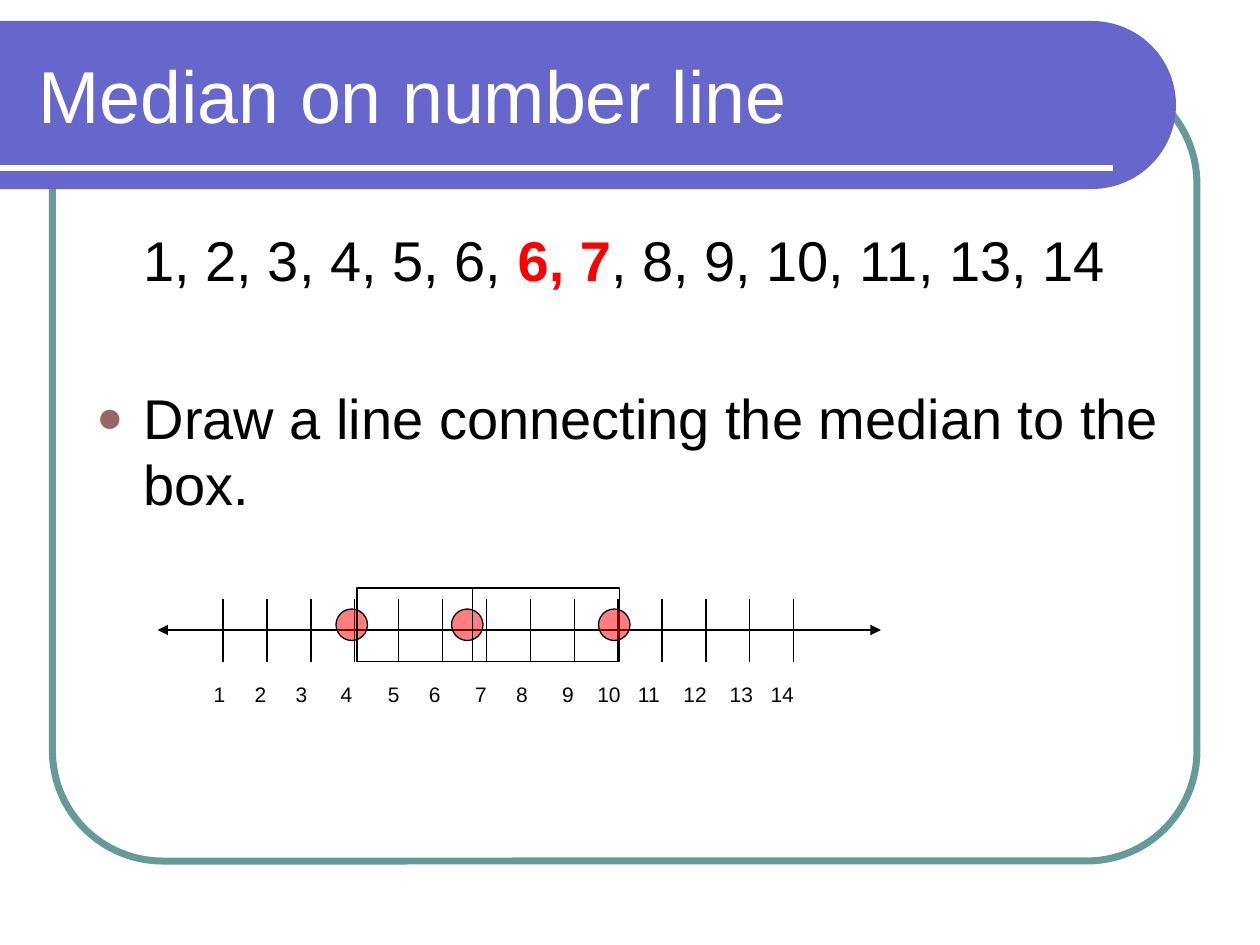
from dataclasses import dataclass
from math import cos, pi, sin

from lxml.etree import SubElement
from pptx import Presentation
from pptx.dml.color import RGBColor
from pptx.enum.shapes import MSO_CONNECTOR as Connector, MSO_SHAPE as Shape
from pptx.enum.text import MSO_ANCHOR as Anchor, PP_ALIGN as Align
from pptx.oxml.ns import qn
from pptx.util import Inches, Pt


@dataclass(frozen=True)
class Theme:
    """Colours, font and type sizes of the slide."""
    font: str = "Arial"
    banner: str = "6666CC"
    frame: str = "669999"
    bullet: str = "996666"
    accent: str = "FF0000"
    ink: str = "000000"
    paper: str = "FFFFFF"
    title: int = 42
    body: int = 32
    label: int = 12
    thin: float = 0.75


THEME = Theme()
COLUMNS, ROWS = 120, 90
LABEL_CENTRES = (20.9, 24.8, 28.7, 33, 37.5, 41.4, 45.8,
                 49.7, 54.1, 58, 61.8, 66.2, 70.6, 74.5)


def grid(*cells):
    """Turn columns or rows, each a twelfth of an inch, into lengths."""
    return [Inches(cell / 12) for cell in cells]


def apply(target, **values):
    """Set each given attribute on the target."""
    for name, value in values.items():
        setattr(target, name, value)


def paint(shape, fill=None, line=None, width=THEME.thin, alpha=None):
    """Give a shape its fill and outline, without a shadow."""
    shape.shadow.inherit = False
    if fill:
        shape.fill.solid()
        shape.fill.fore_color.rgb = RGBColor.from_string(fill)
    else:
        shape.fill.background()
    if alpha:
        colour = shape.fill._xPr.find(qn("a:solidFill"))[0]
        SubElement(colour, qn("a:alpha"), val=str(alpha * 1000))
    if line:
        shape.line.color.rgb = RGBColor.from_string(line)
        shape.line.width = Pt(width)
    else:
        shape.line.fill.background()


def add_preset(slide, kind, cells, **look):
    """Add a painted preset shape."""
    shape = slide.shapes.add_shape(kind, *grid(*cells))
    paint(shape, **look)
    return shape


def add_line(slide, cells, colour=THEME.ink, width=THEME.thin, arrow=False):
    """Add a straight line, with an arrowhead at its end on request."""
    line = slide.shapes.add_connector(Connector.STRAIGHT, *grid(*cells))
    line.line.color.rgb = RGBColor.from_string(colour)
    line.line.width = Pt(width)
    if arrow:
        SubElement(line.line._get_or_add_ln(), qn("a:tailEnd"), type="triangle")
    SubElement(line._element.spPr, qn("a:effectLst"))


def add_banner(slide, top, right, height):
    """Add the title band, which ends in a half circle."""
    radius, steps = height / 2, 48
    angles = [pi * step / steps - pi / 2 for step in range(steps + 1)]
    arc = [grid(right - radius + radius * cos(angle),
                top + radius + radius * sin(angle)) for angle in angles]
    builder = slide.shapes.build_freeform(*grid(0, top), scale=1.0)
    builder.add_line_segments(arc + [grid(0, top + height)], close=True)
    paint(builder.convert_to_shape(), fill=THEME.banner)


def add_text_frame(slide, cells, **values):
    """Add a wrapping text box and return its frame."""
    frame = slide.shapes.add_textbox(*grid(*cells)).text_frame
    apply(frame, word_wrap=True, **values)
    return frame


def add_run(paragraph, text, size, colour=THEME.ink, bold=False):
    """Append formatted text to a paragraph."""
    run = paragraph.add_run()
    run.text = text
    apply(run.font, name=THEME.font, size=Pt(size), bold=bold)
    run.font.color.rgb = RGBColor.from_string(colour)


def indent(paragraph, margin, hanging=0):
    """Set the left margin and hanging indent in columns."""
    properties = paragraph._p.get_or_add_pPr()
    for name, cells in {"marL": margin, "indent": -hanging}.items():
        properties.set(name, str(grid(cells)[0]))
    return properties


def add_bullet(properties):
    """Add the round coloured bullet."""
    colour = SubElement(properties, qn("a:buClr"))
    SubElement(colour, qn("a:srgbClr"), val=THEME.bullet)
    SubElement(properties, qn("a:buSzPct"), val="80000")
    SubElement(properties, qn("a:buFont"), typeface=THEME.font)
    SubElement(properties, qn("a:buChar"), char="●")


def add_body(slide):
    """Add the data row and the instruction."""
    margin = 4.5
    frame = add_text_frame(slide, (8, 21, 104, 29))
    data, task = frame.paragraphs[0], frame.add_paragraph()
    indent(data, margin)
    add_run(data, "1, 2, 3, 4, 5, 6, ", THEME.body)
    add_run(data, "6, 7", THEME.body, THEME.accent, True)
    add_run(data, ", 8, 9, 10, 11, 13, 14", THEME.body)
    add_bullet(indent(task, margin, margin))
    add_run(task, "Draw a line connecting the median to the box.", THEME.body)
    apply(data, line_spacing=Pt(38))
    apply(task, line_spacing=Pt(38), space_before=Pt(52))


def add_labels(slide):
    """Add each number centred on its column below the axis."""
    width, height, top = 3, 2.4, 64.9
    for number, centre in enumerate(LABEL_CENTRES, 1):
        frame = add_text_frame(slide, (centre - width / 2, top, width, height),
                               margin_left=0, margin_right=0,
                               margin_top=0, margin_bottom=0)
        paragraph = frame.paragraphs[0]
        paragraph.alignment = Align.CENTER
        add_run(paragraph, str(number), THEME.label)


def add_number_line(slide):
    """Add the axis with its ticks and arrowheads."""
    axis, first, step = 60, 21.25, 4.18
    add_line(slide, (17, axis, 81.8, axis))
    for index in range(len(LABEL_CENTRES)):
        column = first + index * step
        add_line(slide, (column, axis - 3, column, axis + 3))
    for start, end in ((79.7, 83.9), (17, 15)):
        add_line(slide, (start, axis, end, axis), arrow=True)


def add_box_plot(slide):
    """Add the quartile dots, the box and the median line."""
    for column in (32, 43, 57):
        add_preset(slide, Shape.OVAL, (column, 58, 3, 3),
                   fill=THEME.accent, line=THEME.ink, alpha=50)
    add_preset(slide, Shape.RECTANGLE, (34, 56, 25, 7), line=THEME.ink)
    add_line(slide, (45, 56, 45, 63))


def main():
    """Build and save the slide."""
    presentation = Presentation()
    width, height = grid(COLUMNS, ROWS)
    apply(presentation, slide_width=width, slide_height=height)
    slide = presentation.slides.add_slide(presentation.slide_layouts[6])
    frame = add_preset(slide, Shape.ROUNDED_RECTANGLE, (5, 7, 109, 75),
                       line=THEME.frame, width=4)
    frame.adjustments[0] = 0.14
    add_banner(slide, 2, 112, 16)
    add_line(slide, (0, 16, 106, 16), THEME.paper, 3)
    title = add_text_frame(slide, (2.5, 3, 105.25, 12),
                           vertical_anchor=Anchor.MIDDLE)
    add_run(title.paragraphs[0], "Median on number line", THEME.title, THEME.paper)
    add_body(slide)
    add_labels(slide)
    add_number_line(slide)
    add_box_plot(slide)
    presentation.save("out.pptx")


if __name__ == "__main__":
    main()
